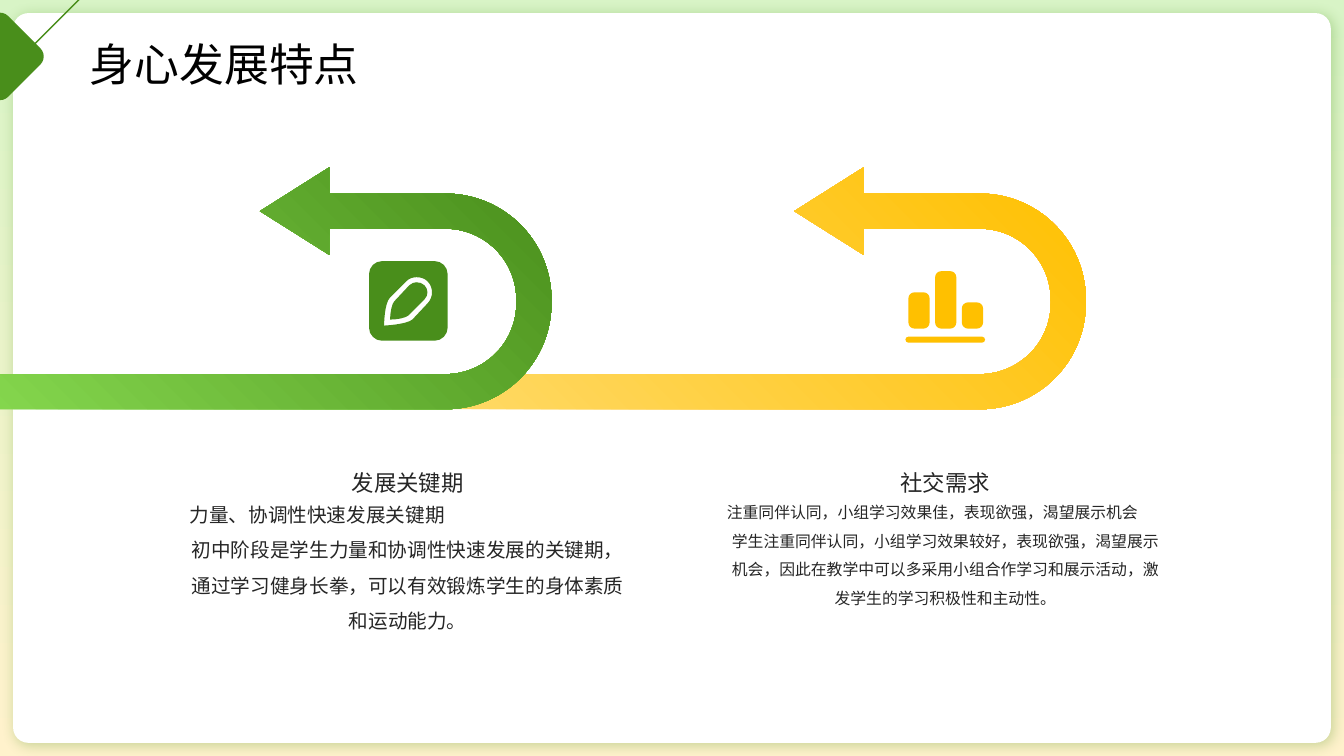
import pptx
import pptx.util
import pptx.dml.color
import pptx.enum.shapes
import pptx.enum.text
import pptx.oxml
import pptx.oxml.ns

Inches, Pt, qn = pptx.util.Inches, pptx.util.Pt, pptx.oxml.ns.qn
Kind = pptx.enum.shapes.MSO_SHAPE
Align = pptx.enum.text.PP_ALIGN
Anchor = pptx.enum.text.MSO_ANCHOR

# Content
TITLE = "身心发展特点"
TOPICS = [
    {"head": "发展关键期", "left": 1.88, "arrow": 1.05, "tone": "green", "size": 14,
     "body": ["力量、协调性快速发展关键期",
              "初中阶段是学生力量和协调性快速发展的关键期，通过学习健身长拳，"
              "可以有效锻炼学生的身体素质和运动能力。"]},
    {"head": "社交需求", "left": 7.21, "arrow": 6.35, "tone": "gold", "size": 11.3,
     "body": ["注重同伴认同，小组学习效果佳，表现欲强，渴望展示机会",
              "学生注重同伴认同，小组学习效果较好，表现欲强，渴望展示机会，"
              "因此在教学中可以多采用小组合作学习和展示活动，激发学生的学习积极性和主动性。"]},
]
THEME = {
    "font": "Noto Sans CJK SC", "title": 32, "head": 16,
    "black": "000000", "text": "262626", "white": "FFFFFF",
    "green": "498E1B", "gold": "FFC000",
    "fade": {"green": "8BDE53", "gold": "FFD966"},
    "back": ("FFF2CC", "D8F4C6"),
}
UTURN = (0.145, 0.181, 0.287, 0.438, 0.449)

# Outlines: a pair is a line end, six numbers are a curve
PEN_IN = [(4.13, 2.8), (4.16, 2.8, 4.19, 2.81, 4.21, 2.83),
          (4.25, 2.87, 4.25, 2.93, 4.21, 2.97), (4.05, 3.13),
          (4.03, 3.15, 3.95, 3.17, 3.87, 3.17),
          (3.87, 3.09, 3.89, 3.01, 3.91, 2.99), (4.06, 2.83),
          (4.08, 2.81, 4.11, 2.8, 4.13, 2.8)]
PEN_OUT = [(4.13, 2.75), (4.1, 2.75, 4.06, 2.76, 4.03, 2.79), (3.87, 2.95),
           (3.81, 3.01, 3.81, 3.23, 3.81, 3.23),
           (3.81, 3.23, 4.03, 3.22, 4.09, 3.17), (4.24, 3.01),
           (4.3, 2.95, 4.3, 2.85, 4.24, 2.79),
           (4.21, 2.76, 4.17, 2.75, 4.13, 2.75)]
CORNER = [(0.06, 0.6), (0.14, 0.6, 0.21, 0.57, 0.27, 0.51), (0.83, -0.05),
          (-0.71, -0.05), (-0.14, 0.51), (-0.09, 0.57, -0.01, 0.6, 0.06, 0.6)]


def tint(key):
    return pptx.dml.color.RGBColor.from_string(THEME.get(key, key))


def blend(fill, pair, angle):
    fill.gradient()
    fill.gradient_angle = angle
    for stop, hue, spot in zip(fill.gradient_stops, pair, (0, 1)):
        stop.color.rgb = tint(hue)
        stop.position = spot


def block(kind, box, hue=None, adjust=()):
    shape = slide.shapes.add_shape(kind, *map(Inches, box))
    shape.shadow.inherit = False
    shape.line.fill.background()
    if hue:
        shape.fill.solid()
        shape.fill.fore_color.rgb = tint(hue)
    for i, value in enumerate(adjust):
        shape.adjustments[i] = value
    return shape


def rounded(x, y, w, h, r):
    """Outline of a rectangle with round corners."""
    k, right, low = r * 0.45, x + w, y + h
    return [(x + r, y), (right - r, y), (right - k, y, right, y + k, right, y + r),
            (right, low - r), (right, low - k, right - k, low, right - r, low),
            (x + r, low), (x + k, low, x, low - k, x, low - r),
            (x, y + r), (x, y + k, x + k, y, x + r, y)]


def bend(line, part, left, top):
    """Turn a line segment into a curve."""
    curve = line.makeelement(qn("a:cubicBezTo"), {})
    for x, y in zip(part[::2], part[1::2]):
        spot = {"x": str(Inches(x) - left), "y": str(Inches(y) - top)}
        curve.append(line.makeelement(qn("a:pt"), spot))
    line.getparent().replace(line, curve)


def draw(outlines, hue=None):
    pen = None
    for outline in outlines:
        dots = [tuple(map(Inches, part[-2:])) for part in outline]
        if pen is None:
            pen = slide.shapes.build_freeform(*dots[0], scale=1.0)
        else:
            pen.move_to(*dots[0])
        pen.add_line_segments(dots[1:], close=True)
    shape = pen.convert_to_shape()
    lines = list(shape._element.iter(qn("a:lnTo")))
    parts = [part for outline in outlines for part in outline[1:]]
    for line, part in zip(lines, parts):
        if len(part) == 6:
            bend(line, part, shape.left, shape.top)
    shape.shadow.inherit = False
    if hue:
        shape.fill.solid()
        shape.fill.fore_color.rgb = tint(hue)
        shape.line.fill.background()
    else:
        shape.fill.background()
    return shape


def write(box, lines, size, hue, styles, anchor):
    frame = slide.shapes.add_textbox(*map(Inches, box)).text_frame
    frame.word_wrap = True
    frame.vertical_anchor = anchor
    frame.margin_left = frame.margin_top = frame.margin_right = frame.margin_bottom = 0
    frame.text = "\n".join(lines)
    for para, (side, gap) in zip(frame.paragraphs, styles):
        para.alignment = side
        para.line_spacing = gap
        for run in para.runs:
            run.font.size = Pt(size)
            run.font.name = THEME["font"]
            run.font.color.rgb = tint(hue)
            east = run.font._element.makeelement(qn("a:ea"), {"typeface": THEME["font"]})
            run.font._element.append(east)


deck = pptx.Presentation()
deck.slide_width, deck.slide_height = Inches(13.33), Inches(7.5)
slide = deck.slides.add_slide(deck.slide_layouts[6])

# Backdrop and panel
blend(block(Kind.RECTANGLE, (0, 0, 13.33, 7.5)).fill, THEME["back"], 90)
panel = block(Kind.ROUNDED_RECTANGLE, (0.13, 0.13, 13.07, 7.24), "white", [0.021])
glow = pptx.oxml.parse_xml(
    f'<a:outerShdw {pptx.oxml.ns.nsdecls("a")} blurRad="{Pt(10)}" dist="{Pt(3)}" '
    f'dir="2700000" algn="ctr" rotWithShape="0"><a:srgbClr val="{THEME["green"]}">'
    '<a:alpha val="30000"/></a:srgbClr></a:outerShdw>')
panel._element.spPr.find(qn("a:effectLst")).append(glow)

# Arrows and icons, the green pair in front
bars = [rounded(9.01 + 0.265 * i, 3.26 - tall, 0.21, tall, 0.06)
        for i, tall in enumerate((0.36, 0.57, 0.26))]
icons = {"gold": [rounded(8.98, 3.34, 0.79, 0.06, 0.03)] + bars,
         "green": [PEN_IN, PEN_OUT, rounded(3.66, 2.59, 0.78, 0.79, 0.13)]}
for topic in reversed(TOPICS):
    tone = topic["tone"]
    arrow = block(Kind.U_TURN_ARROW, (topic["arrow"], -0.36, 2.4, 6.44), adjust=UTURN)
    arrow.rotation = 90
    arrow._element.spPr.xfrm.set("flipH", "1")
    blend(arrow.fill, (THEME["fade"][tone], tone), 45)
    draw(icons[tone], tone)

# Topic texts
for topic in TOPICS:
    write((topic["left"], 4.99, 4.33, 1.25), topic["body"], topic["size"], "text",
          [(Align.LEFT, 1.0), (Align.CENTER, 1.5)], Anchor.TOP)
    write((topic["left"], 4.09, 4.33, 0.83), [topic["head"]], THEME["head"], "text",
          [(Align.CENTER, 1.3)], Anchor.BOTTOM)

# Corner ornament and title
edge = draw([CORNER])
edge.line.color.rgb = tint("green")
edge.line.width = Pt(1)
block(Kind.ROUNDED_RECTANGLE, (-0.34, 0.22, 0.68, 0.68), "green").rotation = 45
write((0.89, 0.26, 8.51, 0.47), [TITLE], THEME["title"], "black",
      [(Align.LEFT, 1.5)], Anchor.MIDDLE)

deck.save("out.pptx")
